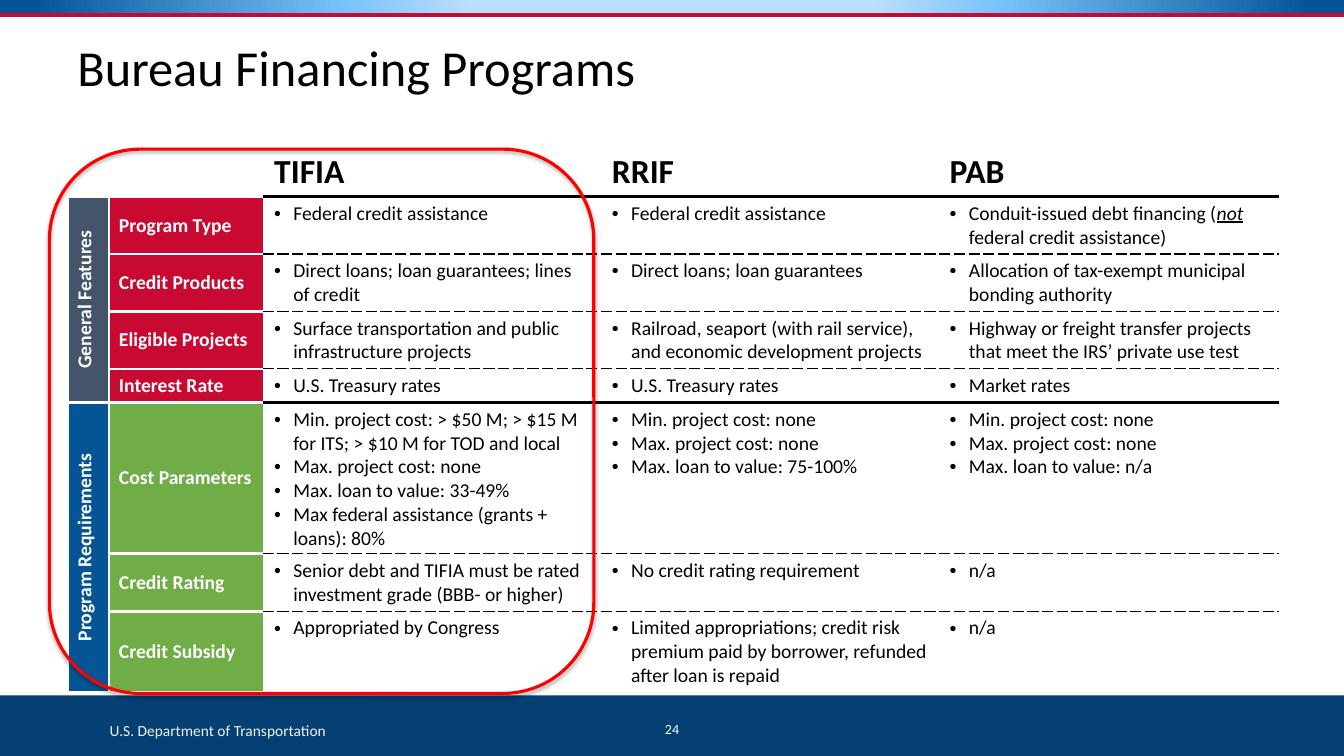
"""Build the Bureau Financing Programs comparison slide."""
from lxml import etree
from pptx import Presentation
from pptx.dml.color import RGBColor
from pptx.enum import shapes, text
from pptx.oxml import parse_xml
from pptx.oxml.ns import nsdecls, qn
from pptx.util import Inches, Pt

WHITE = RGBColor(0xFF, 0xFF, 0xFF)
BLACK = RGBColor(0x00, 0x00, 0x00)
PALE = RGBColor(0xF2, 0xF2, 0xF2)
CRIMSON = RGBColor(0xC8, 0x0A, 0x32)
RED = RGBColor(0xFF, 0x00, 0x00)
NAVY = RGBColor(0x04, 0x40, 0x71)
BLUE = RGBColor(0x05, 0x55, 0x96)
SLATE = RGBColor(0x44, 0x54, 0x6A)
GREEN = RGBColor(0x70, 0xAD, 0x47)

PROGRAMS = ["TIFIA", "RRIF", "PAB"]
FEATURES = [
    ("Program Type", ["Federal credit assistance"], ["Federal credit assistance"],
     ["Conduit-issued debt financing (_not _federal credit assistance)"]),
    ("Credit Products", ["Direct loans; loan guarantees; lines of credit"],
     ["Direct loans; loan guarantees"],
     ["Allocation of tax-exempt municipal bonding authority"]),
    ("Eligible Projects", ["Surface transportation and public infrastructure projects"],
     ["Railroad, seaport (with rail service), and economic development projects"],
     ["Highway or freight transfer projects that meet the IRS’ private use test"]),
    ("Interest Rate", ["U.S. Treasury rates"], ["U.S. Treasury rates"], ["Market rates"]),
    ("Cost Parameters",
     ["Min. project cost: > $50 M; > $15 M for ITS; > $10 M for TOD and local",
      "Max. project cost: none", "Max. loan to value: 33-49%",
      "Max federal assistance (grants + loans): 80%"],
     ["Min. project cost: none", "Max. project cost: none", "Max. loan to value: 75-100%"],
     ["Min. project cost: none", "Max. project cost: none", "Max. loan to value: n/a"]),
    ("Credit Rating", ["Senior debt and TIFIA must be rated investment grade (BBB- or higher)"],
     ["No credit rating requirement"], ["n/a"]),
    ("Credit Subsidy", ["Appropriated by Congress"],
     ["Limited appropriations; credit risk premium paid by borrower, refunded after loan is repaid"],
     ["n/a"]),
]
GROUPS = [("General Features", 1, 4, SLATE, CRIMSON),
          ("Program Requirements", 5, 7, BLUE, GREEN)]
COLUMN_WIDTHS = [0.41, 1.54, 3.35, 3.35, 3.35]
ROW_HEIGHTS = [0.5, 0.57, 0.57, 0.57, 0.33, 1.5, 0.57, 0.8]
SOLID_WHITE = (WHITE, 2.25, "solid")
SOLID_BLACK = (BLACK, 2.25, "solid")
DASHED = (BLACK, 1, "dash")
ROW_EDGES = [SOLID_WHITE, SOLID_BLACK, DASHED, DASHED, DASHED,
             SOLID_BLACK, DASHED, DASHED, SOLID_WHITE]


def write(frame, lines, size, color, bold=False, bullet=False, align=None, spacing=None):
    for index, line in enumerate(lines):
        paragraph = frame.add_paragraph() if index else frame.paragraphs[0]
        if bullet:
            properties = paragraph._p.get_or_add_pPr()
            properties.set("marL", str(Inches(0.19)))
            properties.set("indent", str(Inches(-0.19)))
            etree.SubElement(properties, qn("a:buFont"), typeface="Arial")
            etree.SubElement(properties, qn("a:buChar"), char="•")
        paragraph.alignment = align
        paragraph.line_spacing = spacing
        for position, part in enumerate(line.split("_")):
            run = paragraph.add_run()
            run.text = part
            run.font.color.rgb = color
            emphasis = position % 2 == 1
            styles = {"name": "Calibri", "size": Pt(size), "bold": bold,
                      "italic": emphasis, "underline": emphasis}
            for name, value in styles.items():
                setattr(run.font, name, value)


def set_border(cell, side, color, width, dash):
    cell._tc.get_or_add_tcPr().append(parse_xml(
        f'<a:ln{side} {nsdecls("a")} w="{Pt(width)}" cap="flat" cmpd="sng">'
        f'<a:solidFill><a:srgbClr val="{color}"/></a:solidFill>'
        f'<a:prstDash val="{dash}"/></a:ln{side}>'))


presentation = Presentation()
presentation.slide_width = Inches(13.33)
presentation.slide_height = Inches(7.5)
slide = presentation.slides.add_slide(presentation.slide_layouts[6])

for top, height in [(0, 0.15), (6.9, 0.6)]:
    band = slide.shapes.add_shape(shapes.MSO_SHAPE.RECTANGLE, 0, Inches(top),
                                  Inches(13.33), Inches(height))
    band.shadow.inherit = False
    band.line.fill.background()
    if top:
        band.fill.solid()
        band.fill.fore_color.rgb = NAVY
    else:
        band._element.spPr.find(qn("a:prstGeom")).addnext(parse_xml(
            f'<a:gradFill {nsdecls("a")} rotWithShape="1"><a:gsLst>'
            '<a:gs pos="30000"><a:srgbClr val="BADFFD"/></a:gs>'
            '<a:gs pos="50000"><a:srgbClr val="76BFFA"/></a:gs>'
            f'<a:gs pos="95000"><a:srgbClr val="{BLUE}"/></a:gs></a:gsLst>'
            '<a:path path="circle"><a:fillToRect l="50000" t="-80000" r="50000" b="180000"/>'
            '</a:path></a:gradFill>'))

rule = slide.shapes.add_connector(shapes.MSO_CONNECTOR.STRAIGHT, Inches(13.33), Inches(0.15),
                                  0, Inches(0.15))
rule.line.color.rgb = CRIMSON
rule.line.width = Pt(2.5)
etree.SubElement(rule._element.spPr, qn("a:effectLst"))

TOP, MIDDLE = text.MSO_ANCHOR.TOP, text.MSO_ANCHOR.MIDDLE
CENTER = text.PP_ALIGN.CENTER
for words, box, size, color, anchor, align, spacing in [
    ("U.S. Department of Transportation", (0.99, 7.1, 2.5, 0.29), 11, PALE, TOP, None, None),
    ("24", (6.21, 7.04, 0.91, 0.4), 10, WHITE, MIDDLE, CENTER, 0.9),
    ("Bureau Financing Programs", (0.67, 0.4, 12, 0.6), 36, BLACK, MIDDLE, None, 0.9),
]:
    frame = slide.shapes.add_textbox(*map(Inches, box)).text_frame
    frame.word_wrap = True
    frame.vertical_anchor = anchor
    write(frame, [words], size, color, align=align, spacing=spacing)

graphic = slide.shapes.add_table(len(ROW_HEIGHTS), len(COLUMN_WIDTHS), Inches(0.67), Inches(1.45),
                                 Inches(sum(COLUMN_WIDTHS)), Inches(sum(ROW_HEIGHTS)))
table = graphic.table
table.first_row = table.horz_banding = False
for column, width in zip(table.columns, COLUMN_WIDTHS):
    column.width = Inches(width)
for row, height in zip(table.rows, ROW_HEIGHTS):
    row.height = Inches(height)

for row in range(len(ROW_HEIGHTS)):
    for column in range(len(COLUMN_WIDTHS)):
        cell = table.cell(row, column)
        top, bottom = ROW_EDGES[row:row + 2] if column > 1 else (SOLID_WHITE, SOLID_WHITE)
        for side, edge in zip("LRTB", (SOLID_WHITE, SOLID_WHITE, top, bottom)):
            set_border(cell, side, *edge)
        cell.fill.background()

table.cell(0, 0).merge(table.cell(0, 1))
for column, program in enumerate(PROGRAMS, 2):
    write(table.cell(0, column).text_frame, [program], 24, BLACK, bold=True)

for group, first, last, group_color, label_color in GROUPS:
    group_cell = table.cell(first, 0)
    group_cell.merge(table.cell(last, 0))
    group_cell._tc.get_or_add_tcPr().set("vert", "vert270")
    group_cell.fill.solid()
    group_cell.fill.fore_color.rgb = group_color
    write(group_cell.text_frame, [group], 14, WHITE, bold=True, align=CENTER)
    for row in range(first, last + 1):
        label, *details = FEATURES[row - 1]
        label_cell = table.cell(row, 1)
        label_cell.vertical_anchor = MIDDLE
        label_cell.fill.solid()
        label_cell.fill.fore_color.rgb = label_color
        write(label_cell.text_frame, [label], 14, WHITE, bold=True)
        for column, lines in enumerate(details, 2):
            write(table.cell(row, column).text_frame, lines, 14, BLACK, bullet=True)

highlight = slide.shapes.add_shape(shapes.MSO_SHAPE.ROUNDED_RECTANGLE, Inches(0.49), Inches(1.48),
                                   Inches(5.4), Inches(5.4))
highlight.fill.background()
highlight.line.color.rgb = RED
highlight.line.width = Pt(2.25)
highlight._element.spPr.append(parse_xml(
    f'<a:effectLst {nsdecls("a")}><a:outerShdw blurRad="{Pt(3.1)}" dist="{Pt(1.8)}" dir="5400000" '
    'rotWithShape="0"><a:srgbClr val="000000"><a:alpha val="35000"/></a:srgbClr>'
    '</a:outerShdw></a:effectLst>'))

presentation.save("out.pptx")
